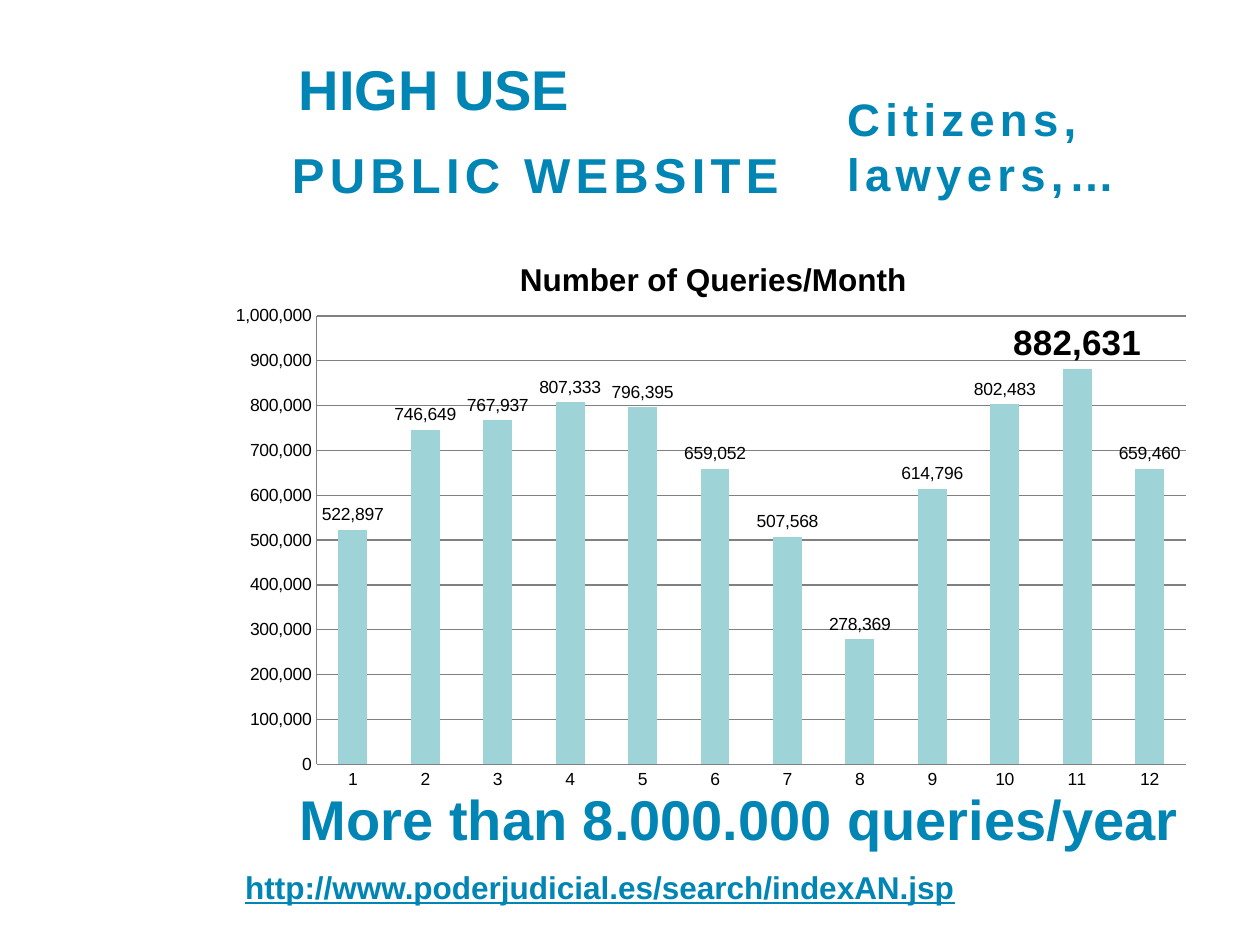
from pptx import Presentation
from pptx.chart.data import CategoryChartData
from pptx.dml.color import RGBColor
from pptx.enum.chart import XL_CHART_TYPE, XL_LABEL_POSITION, XL_TICK_MARK
from pptx.enum.text import MSO_ANCHOR, PP_ALIGN
from pptx.oxml import parse_xml
from pptx.oxml.ns import nsdecls, qn
from pptx.util import Pt

BLUE, AQUA, GRAY, BLACK = "0085B4", "9ED3D7", "808080", "000000"
QUERIES = [522897, 746649, 767937, 807333, 796395, 659052,
           507568, 278369, 614796, 802483, 882631, 659460]


def rgb(color):
    return RGBColor.from_string(color)


def set_font(font, size, bold=False, color=BLACK):
    font.name, font.size, font.bold = "Arial", Pt(size), bold
    font.color.rgb = rgb(color)


def write(frame, text, size, align=PP_ALIGN.LEFT, anchor=MSO_ANCHOR.TOP,
          spacing=0, underline=False, color=BLUE):
    frame.word_wrap = True
    frame.vertical_anchor = anchor
    paragraph = frame.paragraphs[0]
    paragraph.alignment = align
    run = paragraph.add_run()
    run.text = text
    set_font(run.font, size, bold=True, color=color)
    run.font.underline = underline
    if spacing:
        run.font._element.set("spc", str(spacing * 100))


def add_text(slide, box, text, size, **format):
    frame = slide.shapes.add_textbox(*map(Pt, box)).text_frame
    write(frame, text, size, **format)


def add_heading(slide, box):
    left, top, width, height = box
    title = slide.shapes.title
    title.left, title.top, title.width, title.height = map(Pt, (left + 19.5, top, 256, 58))
    write(title.text_frame, "HIGH USE", 32, anchor=MSO_ANCHOR.MIDDLE)
    add_text(slide, (left, top + 57.5, 324, 41), "PUBLIC WEBSITE", 28,
             align=PP_ALIGN.CENTER, spacing=3)
    add_text(slide, (left + width - 223, top + height - 71, 223, 71),
             "Citizens, lawyers,…", 26, spacing=3)


def add_summary(slide, box):
    left, top, width, height = box
    add_text(slide, (left, top, width, 46), "More than 8.000.000 queries/year", 32,
             align=PP_ALIGN.CENTER)
    add_text(slide, (left + 28, top + height - 29, 431, 29),
             "http://www.poderjudicial.es/search/indexAN.jsp", 18, underline=True)


def place(element, index, target="", **position):
    for old in element.findall(qn("c:layout")):
        element.remove(old)
    modes = "".join(f'<c:{key}Mode val="edge"/>' for key in "xy")
    values = "".join(f'<c:{key} val="{value}"/>' for key, value in position.items())
    element.insert(index, parse_xml(
        f'<c:layout {nsdecls("c")}><c:manualLayout>{target}{modes}{values}'
        '</c:manualLayout></c:layout>'))


def style_axis(axis):
    axis.major_tick_mark = axis.minor_tick_mark = XL_TICK_MARK.NONE
    axis.format.line.color.rgb = rgb(GRAY)
    axis.format.line.width = Pt(0.75)
    set_font(axis.tick_labels.font, 10)


def add_queries_chart(slide, box):
    data = CategoryChartData(number_format="#,##0")
    data.categories = [str(month) for month in range(1, len(QUERIES) + 1)]
    data.add_series("Series 1", QUERIES)
    chart = slide.shapes.add_chart(
        XL_CHART_TYPE.COLUMN_CLUSTERED, *map(Pt, box), data).chart
    set_font(chart.font, 10)
    chart.has_legend = False
    chart.has_title = True
    write(chart.chart_title.text_frame, "Number of Queries/Month", 18,
          align=PP_ALIGN.CENTER, color=BLACK)
    place(chart.chart_title._element, 1, x=0.3, y=0.05)
    place(chart._chartSpace.chart.plotArea, 0, '<c:layoutTarget val="inner"/>',
          x=0.1, y=0.16, w=0.88, h=0.78)

    months, counts = chart.category_axis, chart.value_axis
    style_axis(months)
    style_axis(counts)
    counts.minimum_scale, counts.maximum_scale, counts.major_unit = 0, 1000000, 100000
    counts.tick_labels.number_format = "#,##0"
    counts.tick_labels.number_format_is_linked = False
    counts.has_major_gridlines = True
    counts.major_gridlines.format.line.color.rgb = rgb(GRAY)
    counts.major_gridlines.format.line.width = Pt(0.75)

    plot = chart.plots[0]
    plot.gap_width = 150
    plot.vary_by_categories = False
    series = plot.series[0]
    series.format.fill.solid()
    series.format.fill.fore_color.rgb = rgb(AQUA)
    labels = series.data_labels
    labels.show_value = True
    labels.number_format = "#,##0"
    labels.number_format_is_linked = False
    labels.position = XL_LABEL_POSITION.OUTSIDE_END
    set_font(labels.font, 10)
    peak = series.points[QUERIES.index(max(QUERIES))].data_label
    set_font(peak.font, 20, bold=True)
    peak.position = XL_LABEL_POSITION.OUTSIDE_END


def main():
    deck = Presentation()
    deck.slide_width, deck.slide_height = Pt(720), Pt(540)
    slide = deck.slides.add_slide(deck.slide_layouts[5])
    add_heading(slide, (144, 21.5, 556, 98))
    add_summary(slide, (105, 445, 635, 76.5))
    add_queries_chart(slide, (124.5, 128, 564.5, 328.5))
    deck.save("out.pptx")


if __name__ == "__main__":
    main()
